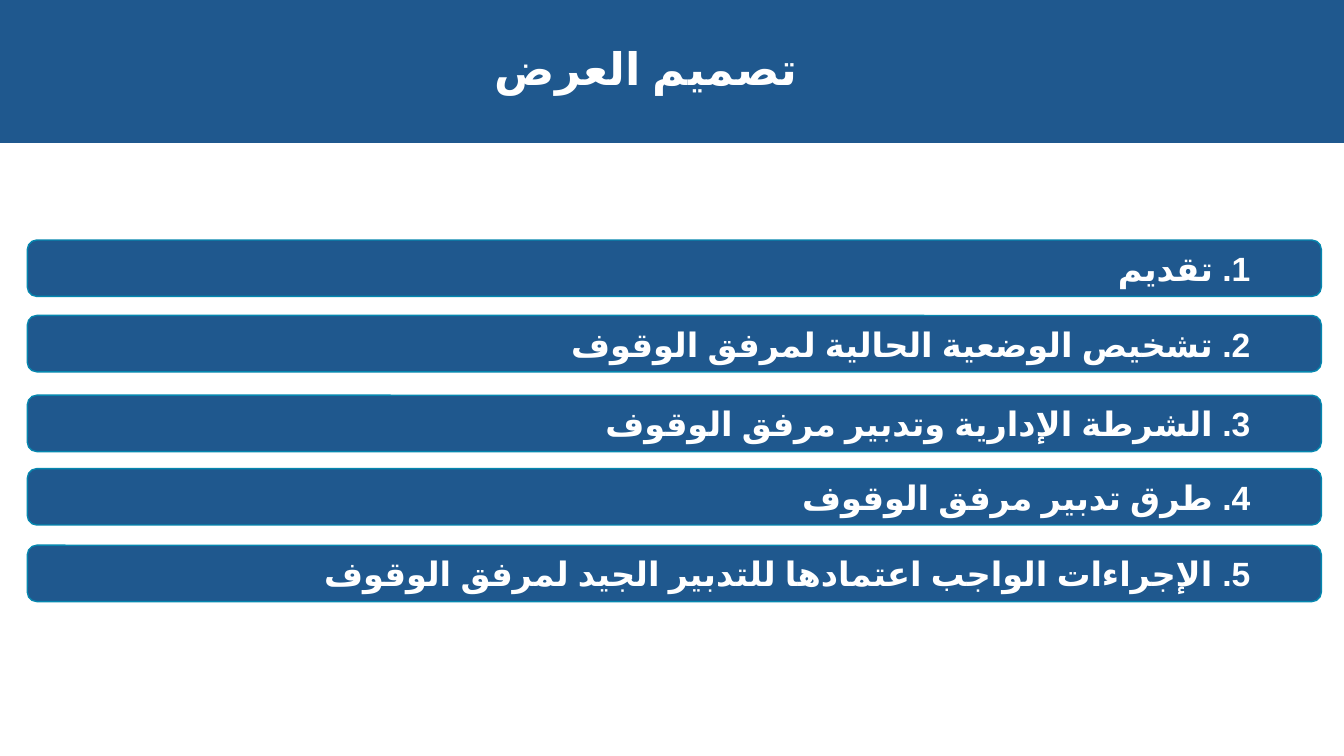
import pptx
import pptx.util
import pptx.dml.color
import pptx.enum.lang
import pptx.enum.shapes
import pptx.enum.text
import pptx.oxml.ns
import lxml.etree
from dataclasses import dataclass

Cm = pptx.util.Cm
Pt = pptx.util.Pt
Align = pptx.enum.text.PP_ALIGN
Fit = pptx.enum.text.MSO_AUTO_SIZE
Kind = pptx.enum.shapes.MSO_SHAPE
qn = pptx.oxml.ns.qn

TITLE = "تصميم العرض"
ITEMS = [
    (6.05, "تقديم"),
    (7.95, "تشخيص الوضعية الحالية لمرفق الوقوف"),
    (9.96, "الشرطة الإدارية وتدبير مرفق الوقوف"),
    (11.81, "طرق تدبير مرفق الوقوف"),
    (13.74, "الإجراءات الواجب اعتمادها للتدبير الجيد لمرفق الوقوف"),
]


@dataclass
class Theme:
    blue: str = "1F588E"
    edge: str = "0587AF"
    white: str = "FFFFFF"
    head: int = 32
    item: int = 24
    face: str = "Arial"
    bar: str = "Lato"


theme = Theme()
WIDE, HIGH = 33.87, 19.05
LEFT, SPAN, TALL = 0.69, 32.61, 1.42


def color(code):
    return pptx.dml.color.RGBColor.from_string(code)


def write(shape, text, size, face, align, fit, indent=None, lines=1.0):
    frame = shape.text_frame
    frame.word_wrap = True
    frame.auto_size = fit
    frame.vertical_anchor = pptx.enum.text.MSO_ANCHOR.MIDDLE
    para = frame.paragraphs[0]
    para.alignment = align
    para.line_spacing = lines
    para.space_before = Pt(0)
    para.space_after = Pt(6)
    if indent is not None:
        props = para._p.get_or_add_pPr()
        props.set("rtl", "1")
        props.set("marL", str(Cm(indent)))
        props.set("indent", "0")
    run = para.add_run()
    run.text = text
    run.font.size = Pt(size)
    run.font.bold = True
    run.font.name = face
    run.font.language_id = pptx.enum.lang.MSO_LANGUAGE_ID.ARABIC_MOROCCO
    run.font.color.rgb = color(theme.white)
    script = lxml.etree.SubElement(run.font._element, qn("a:cs"))
    script.set("typeface", theme.face)


def block(slide, kind, left, top, width, height, edge=None):
    shape = slide.shapes.add_shape(kind, Cm(left), Cm(top), Cm(width), Cm(height))
    shape.shadow.inherit = False
    shape.fill.solid()
    shape.fill.fore_color.rgb = color(theme.blue)
    if edge:
        shape.line.color.rgb = color(edge)
        shape.line.width = Pt(1)
    else:
        shape.line.fill.background()
    return shape


def main():
    deck = pptx.Presentation()
    deck.slide_width, deck.slide_height = Cm(WIDE), Cm(HIGH)
    slide = deck.slides.add_slide(deck.slide_layouts[5])

    title = slide.shapes.title
    title.left, title.top = Cm(2.9), Cm(0)
    title.width, title.height = Cm(26.77), Cm(3.56)
    write(title, TITLE, theme.head, theme.face, Align.CENTER, Fit.NONE, lines=0.9)

    banner = block(slide, Kind.PARALLELOGRAM, 0, 0, WIDE, 3.6)
    banner.adjustments[0] = 0
    title.element.addprevious(banner.element)

    for rank, (top, text) in enumerate(ITEMS, 1):
        bar = block(slide, Kind.ROUNDED_RECTANGLE, LEFT, top, SPAN, TALL, theme.edge)
        write(bar, f"{rank}. {text}", theme.item, theme.bar, Align.RIGHT,
              Fit.SHAPE_TO_FIT_TEXT, indent=1.47)

    deck.save("out.pptx")


if __name__ == "__main__":
    main()
